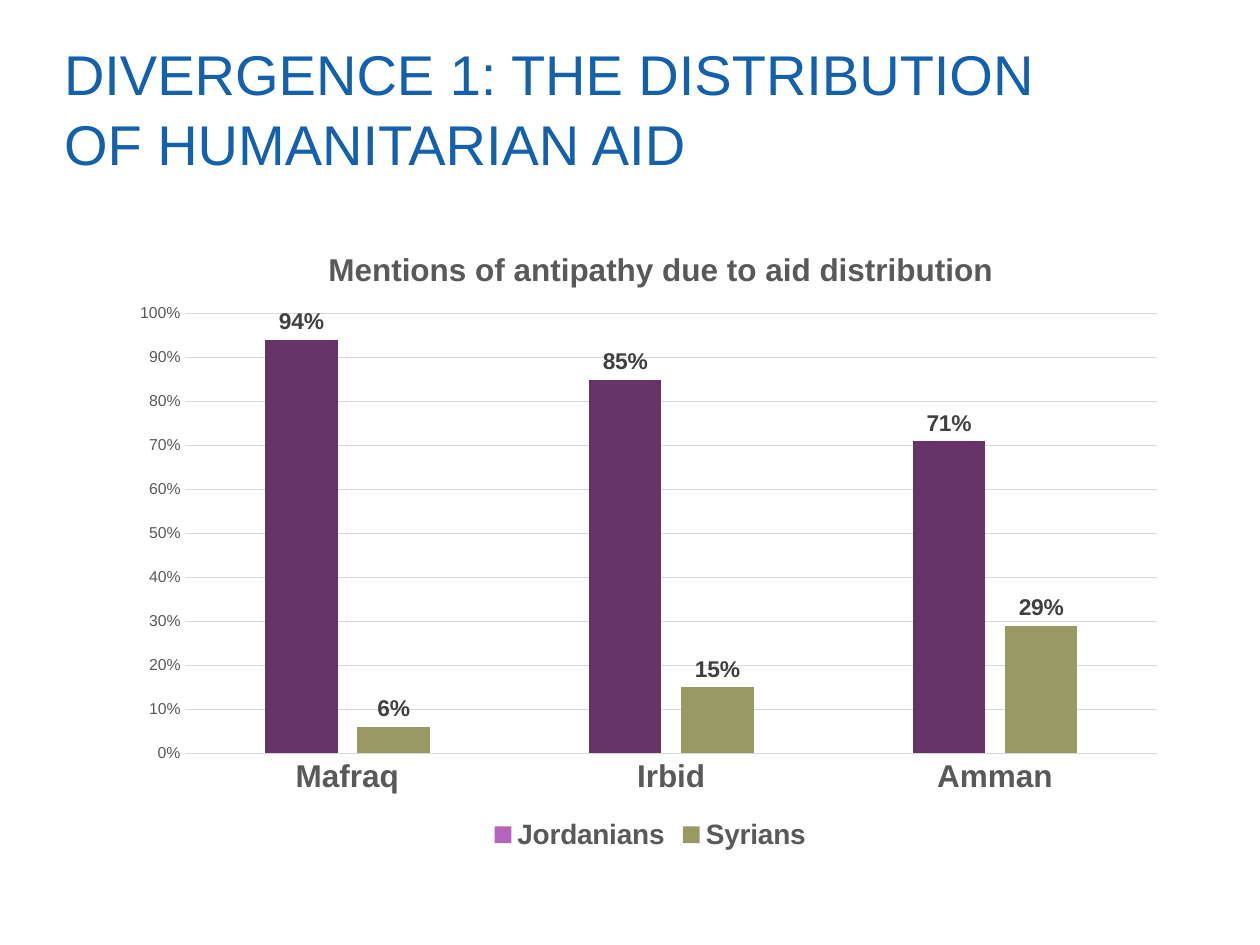
from lxml import etree
from pptx import Presentation
from pptx.chart.data import CategoryChartData
from pptx.dml.color import RGBColor
from pptx.enum.chart import XL_CHART_TYPE, XL_LABEL_POSITION, XL_LEGEND_POSITION, XL_TICK_MARK
from pptx.enum.text import MSO_ANCHOR
from pptx.oxml.ns import qn
from pptx.util import Pt

BLUE = RGBColor(0x13, 0x60, 0xAD)
BLACK = RGBColor(0, 0, 0)
GREY = RGBColor(0x59, 0x59, 0x59)
DARK_GREY = RGBColor(0x40, 0x40, 0x40)
LIGHT_GREY = RGBColor(0xD9, 0xD9, 0xD9)
ORCHID = RGBColor(0xB4, 0x65, 0xBB)
PURPLE = RGBColor(0x66, 0x33, 0x66)
OLIVE = RGBColor(0x99, 0x99, 0x66)

CLUSTERED = XL_CHART_TYPE.COLUMN_CLUSTERED
OUTSIDE_END = XL_LABEL_POSITION.OUTSIDE_END
BOTTOM = XL_LEGEND_POSITION.BOTTOM
NO_TICK = XL_TICK_MARK.NONE
MIDDLE = MSO_ANCHOR.MIDDLE

FONT = "Arial"
CITIES = ["Mafraq", "Irbid", "Amman"]
SHARES = {"Jordanians": [0.94, 0.85, 0.71], "Syrians": [0.06, 0.15, 0.29]}


def style_font(font, size, color, bold=False):
    """Set face, size, colour and weight of a font."""
    font.name = FONT
    font.size = Pt(size)
    font.color.rgb = color
    font.bold = bold


def style_line(line, color):
    """Give a chart line its colour and thin width."""
    line.color.rgb = color
    line.width = Pt(0.75)


def set_layout(parent, index, **settings):
    """Place a chart part by fractions of the chart area."""
    for layout in parent.findall(qn("c:layout")):
        parent.remove(layout)
    layout = etree.Element(qn("c:layout"))
    manual = etree.SubElement(layout, qn("c:manualLayout"))
    for name, value in settings.items():
        etree.SubElement(manual, qn(f"c:{name}")).set("val", str(value))
    parent.insert(index, layout)


def add_heading(slide, left, top, width, height):
    """Write the slide heading, centred vertically in its box."""
    frame = slide.shapes.add_textbox(Pt(left), Pt(top), Pt(width), Pt(height)).text_frame
    frame.word_wrap = True
    frame.vertical_anchor = MIDDLE
    paragraph = frame.paragraphs[0]
    paragraph.text = "DIVERGENCE 1: THE DISTRIBUTION OF HUMANITARIAN AID"
    paragraph.line_spacing = 1.04
    style_font(paragraph.font, 32, BLUE)


def style_axes(chart):
    """Format the city axis and the percentage axis."""
    city_axis, share_axis = chart.category_axis, chart.value_axis
    for axis, size, bold in ((city_axis, 18, True), (share_axis, 9, False)):
        axis.major_tick_mark = axis.minor_tick_mark = NO_TICK
        style_font(axis.tick_labels.font, size, GREY, bold)
    style_line(city_axis.format.line, LIGHT_GREY)
    share_axis.format.line.fill.background()
    style_line(share_axis.major_gridlines.format.line, LIGHT_GREY)
    share_axis.minimum_scale, share_axis.maximum_scale = 0, 1
    share_axis.major_unit = 0.1
    share_axis.tick_labels.number_format = "0%"
    share_axis.tick_labels.number_format_is_linked = False


def style_series(plot):
    """Colour the columns and label them with percentages."""
    plot.gap_width = 219
    plot.overlap = -27
    plot.vary_by_categories = False
    for series, color in zip(plot.series, (ORCHID, OLIVE)):
        series.format.fill.solid()
        series.format.fill.fore_color.rgb = color
        labels = series.data_labels
        labels.show_value = True
        labels.number_format = "0%"
        labels.number_format_is_linked = False
        labels.position = OUTSIDE_END
        style_font(labels.font, 13, DARK_GREY, True)
    for index in range(len(CITIES)):
        fill = plot.series[0].points[index].format.fill
        fill.solid()
        fill.fore_color.rgb = PURPLE


def add_antipathy_chart(slide, left, top, width, height):
    """Add the column chart of antipathy mentions by city."""
    data = CategoryChartData(number_format="0%")
    data.categories = CITIES
    for name, values in SHARES.items():
        data.add_series(name, values)
    chart = slide.shapes.add_chart(
        CLUSTERED, Pt(left), Pt(top), Pt(width), Pt(height), data
    ).chart
    style_font(chart.font, 10, BLACK)
    chart.has_title = True
    title = chart.chart_title
    title.include_in_layout = False
    paragraph = title.text_frame.paragraphs[0]
    paragraph.text = "Mentions of antipathy due to aid distribution"
    style_font(paragraph.font, 18, GREY, True)
    chart.has_legend = True
    chart.legend.position = BOTTOM
    chart.legend.include_in_layout = False
    style_font(chart.legend.font, 16, GREY, True)
    style_axes(chart)
    style_series(chart.plots[0])
    title_element = title.text_frame._txBody.getparent().getparent()
    set_layout(title_element, 1, xMode="edge", yMode="edge", x=0.19, y=0.04)
    plot_area = chart.plots[0]._element.getparent()
    set_layout(plot_area, 0, layoutTarget="inner", xMode="edge", yMode="edge",
               x=0.06, y=0.15, w=0.92, h=0.69)


def main():
    """Build and save the slide."""
    presentation = Presentation()
    presentation.slide_width = Pt(720)
    presentation.slide_height = Pt(540)
    slide = presentation.slides.add_slide(presentation.slide_layouts[6])
    add_heading(slide, 29.5, 18.7, 574, 85)
    add_antipathy_chart(slide, 69.8, 124.6, 603.4, 364.3)
    presentation.save("out.pptx")


if __name__ == "__main__":
    main()
